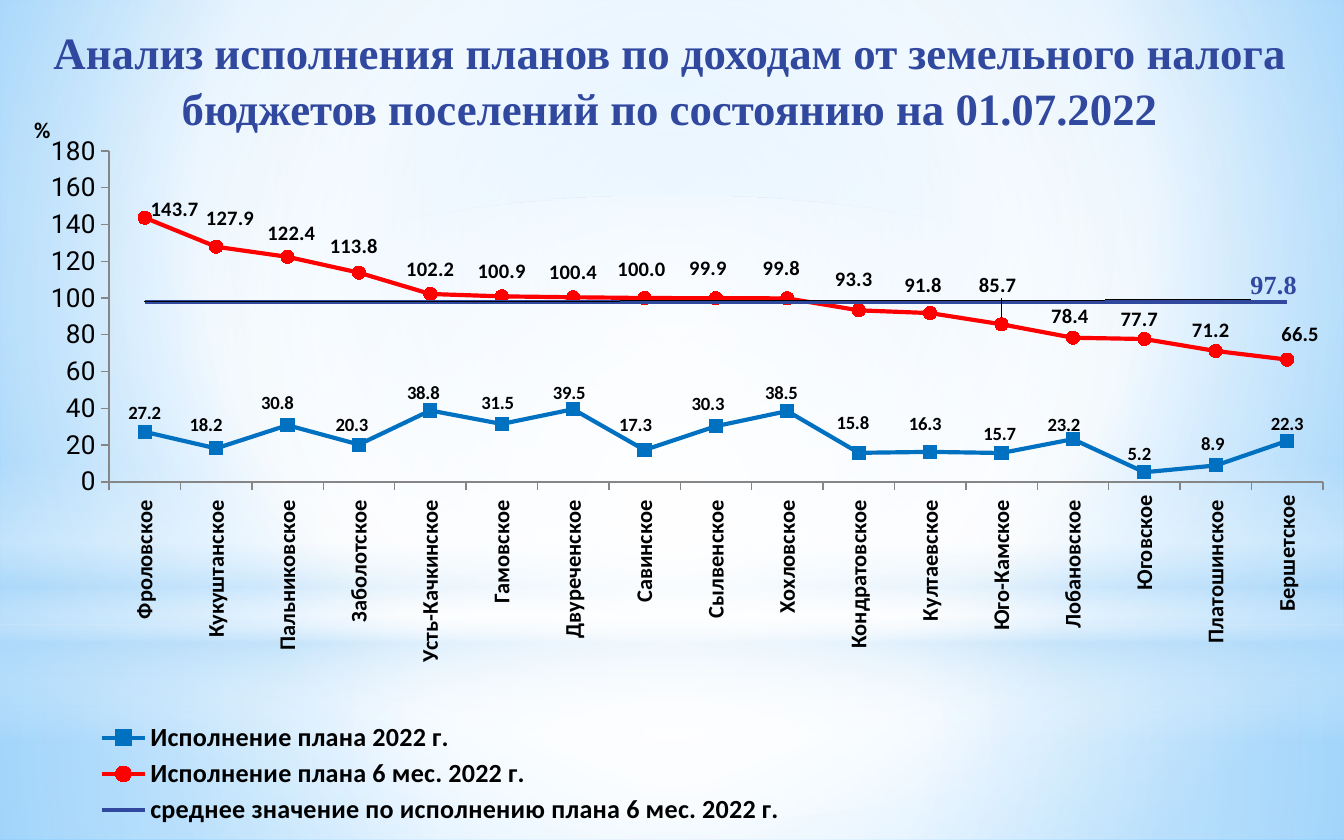
from dataclasses import dataclass
from typing import Any

from pptx import Presentation
from pptx import util as u
from pptx.chart.data import CategoryChartData
from pptx.dml.color import RGBColor
from pptx.enum import chart as ce, shapes, text
from pptx.oxml import parse_xml
from pptx.oxml.ns import nsdecls, qn

SCALE = 914400 / 134.4
CHART_W, CHART_H = 1323, 751

WHITE = RGBColor(0xFF, 0xFF, 0xFF)
BLACK = RGBColor(0x00, 0x00, 0x00)
SKY = RGBColor(0x9E, 0xD5, 0xFF)
AZURE = RGBColor(0x5B, 0xB9, 0xFF)
PALE = RGBColor(0xB4, 0xDC, 0xFA)
INDIGO = RGBColor(0x31, 0x48, 0x9F)
BLUE = RGBColor(0x00, 0x70, 0xC0)
RED = RGBColor(0xFF, 0x00, 0x00)
GRAY = RGBColor(0x86, 0x86, 0x86)

TITLE = ("Анализ исполнения планов по доходам от земельного налога "
         "бюджетов поселений по состоянию на 01.07.2022")
SETTLEMENTS = [
    "Фроловское ", "Кукуштанское ", "Пальниковское ", "Заболотское ",
    "Усть-Качкинское ", "Гамовское ", "Двуреченское ", "Савинское ",
    "Сылвенское ", "Хохловское ", "Кондратовское ", "Култаевское ",
    "Юго-Камское ", "Лобановское ", "Юговское", "Платошинское ", "Бершетское",
]


@dataclass
class Gradient:
    stops: list[tuple[int, RGBColor, int]]
    focus: tuple[int, int, int, int] | None = (50, 50, 50, 50)


@dataclass
class Panel:
    box: tuple[int, int, int, int]
    gradient: Gradient
    kind: Any = shapes.MSO_SHAPE.RECTANGLE


@dataclass
class Line:
    name: str
    values: list[float]
    color: RGBColor
    marker: Any
    font: dict[str, Any]
    offsets: dict[int, tuple[int, int]]
    label_all: bool = True


BACKDROP = Gradient([(0, SKY, 100), (60, WHITE, 100), (100, AZURE, 100)], (20, 10, 20, 60))
PANELS = [
    Panel((0, 625, 1344, 215), Gradient([(0, WHITE, 91), (37, WHITE, 76), (100, PALE, 79)])),
    Panel((0, 0, 1344, 625), Gradient([(0, WHITE, 89), (48, WHITE, 62), (100, PALE, 79)])),
    Panel((0, 461, 1344, 280), Gradient(
        [(0, WHITE, 0), (29, WHITE, 30), (45, PALE, 40), (55, WHITE, 26),
         (65, PALE, 60), (100, WHITE, 0)], None)),
    Panel((0, 196, 1344, 625), Gradient([(0, WHITE, 100), (56, WHITE, 0)]),
          shapes.MSO_SHAPE.OVAL),
]

BOLD = {"name": "Calibri", "bold": True}
LINES = [
    Line("Исполнение плана 2022 г.",
         [27.2, 18.2, 30.8, 20.3, 38.8, 31.5, 39.5, 17.3, 30.3,
          38.5, 15.8, 16.3, 15.7, 23.2, 5.2, 8.9, 22.3],
         BLUE, ce.XL_MARKER_STYLE.SQUARE, BOLD | {"size": u.Pt(10)},
         dict(enumerate([
             (0, 4), (-10, -1), (-10, 0), (-7, 3), (-7, 5), (-4, 2), (-4, 6),
             (-9, -3), (-8, 0), (-6, 4), (-6, -7), (-5, -5), (-2, 4), (-9, 8),
             (-5, 4), (-3, 1), (0, 6)]))),
    Line("Исполнение плана 6 мес. 2022 г.",
         [143.7, 127.9, 122.4, 113.8, 102.2, 100.9, 100.4, 100, 99.9,
          99.8, 93.3, 91.8, 85.7, 78.4, 77.7, 71.2, 66.5],
         RED, ce.XL_MARKER_STYLE.CIRCLE, BOLD | {"size": u.Pt(11)},
         {0: (30, 16), 1: (14, -4), 2: (4, 1), 3: (-5, -2), 7: (-3, -4),
          8: (-8, -5), 9: (-6, -5), 10: (-5, -6), 11: (-7, -3), 12: (-4, -14),
          13: (-3, 3), 14: (-5, 5), 15: (-5, 4), 16: (13, -1)}),
    Line("среднее значение по исполнению плана 6 мес. 2022 г.",
         [97.8] * len(SETTLEMENTS), INDIGO, ce.XL_MARKER_STYLE.NONE,
         {"name": "Times New Roman", "bold": True, "size": u.Pt(14)},
         {0: (1129, 3)}, False),
]


def px(n: int) -> int:
    return round(n * SCALE)


def style(obj: Any, values: dict[str, Any]) -> None:
    for name, value in values.items():
        setattr(obj, name, value)


def set_font(font: Any, values: dict[str, Any], color: RGBColor = BLACK) -> None:
    style(font, values)
    font.color.rgb = color


def paint(root: Any, g: Gradient) -> None:
    stops = "".join(
        f'<a:gs pos="{pos * 1000}"><a:srgbClr val="{color}">'
        f'<a:alpha val="{alpha * 1000}"/></a:srgbClr></a:gs>'
        for pos, color, alpha in g.stops)
    shade = '<a:lin ang="5400000" scaled="0"/>'
    if g.focus:
        sides = " ".join(f'{k}="{v * 1000}"' for k, v in zip("ltrb", g.focus))
        shade = f'<a:path path="circle"><a:fillToRect {sides}/></a:path>'
    solid = root.find(".//" + qn("a:solidFill"))
    solid.getparent().replace(solid, parse_xml(
        f'<a:gradFill {nsdecls("a")} rotWithShape="1"><a:gsLst>{stops}</a:gsLst>{shade}</a:gradFill>'))


def layout_xml(modes: dict[str, str], x: int, y: int, w: int = 0, h: int = 0) -> Any:
    parts = "".join(f'<c:{k} val="{v}"/>' for k, v in modes.items())
    sizes = {"x": x / CHART_W, "y": y / CHART_H}
    if w:
        sizes |= {"w": w / CHART_W, "h": h / CHART_H}
    parts += "".join(f'<c:{k} val="{v:.4f}"/>' for k, v in sizes.items())
    return parse_xml(f'<c:layout {nsdecls("c")}><c:manualLayout>{parts}</c:manualLayout></c:layout>')


def place_after(anchor: Any, layout: Any) -> None:
    old = anchor.getparent().find(qn("c:layout"))
    if old is not None:
        old.getparent().remove(old)
    anchor.addnext(layout)


def add_panel(s: Any, panel: Panel) -> None:
    sp = s.shapes.add_shape(panel.kind, *map(px, panel.box))
    sp.shadow.inherit = False
    sp.line.fill.background()
    sp.fill.solid()
    paint(sp._element, panel.gradient)


def add_title(s: Any) -> None:
    sp = s.shapes.title
    style(sp, {"left": px(0), "top": px(15), "width": px(1339), "height": px(70)})
    s.shapes._spTree.append(sp._element)
    tf = sp.text_frame
    style(tf, {"text": TITLE, "word_wrap": True, "auto_size": text.MSO_AUTO_SIZE.NONE,
               "vertical_anchor": text.MSO_ANCHOR.TOP})
    p = tf.paragraphs[0]
    style(p, {"alignment": text.PP_ALIGN.CENTER, "line_spacing": 1.05})
    set_font(p.runs[0].font, {"name": "Times New Roman", "size": u.Pt(24), "bold": True}, INDIGO)


def format_line(ser: Any, line: Line) -> None:
    ser.smooth = False
    ser.format.line.color.rgb = line.color
    ser.format.line.width = u.Pt(2.25)
    style(ser.marker, {"style": line.marker, "size": 7})
    for part in (ser.marker.format.fill, ser.marker.format.line.fill):
        part.solid()
        part.fore_color.rgb = line.color
    color = BLACK if line.label_all else line.color
    labels = ser.data_labels
    style(labels, {"show_value": line.label_all, "number_format": "#,##0.0",
                   "number_format_is_linked": False, "position": ce.XL_LABEL_POSITION.ABOVE})
    set_font(labels.font, line.font, color)
    for i, (dx, dy) in line.offsets.items():
        label = ser.points[i].data_label
        set_font(label.font, line.font, color)
        label.position = ce.XL_LABEL_POSITION.ABOVE
        idx = ser._element.xpath(f"c:dLbls/c:dLbl/c:idx[@val='{i}']")[0]
        idx.addnext(parse_xml(
            f'<c:numFmt {nsdecls("c")} formatCode="#,##0.0" sourceLinked="0"/>'))
        place_after(idx, layout_xml({}, dx, dy))


def format_axes(chart: Any) -> None:
    cat, val = chart.category_axis, chart.value_axis
    for axis in (cat, val):
        style(axis, {"has_major_gridlines": False,
                     "major_tick_mark": ce.XL_TICK_MARK.OUTSIDE})
        axis.format.line.color.rgb = GRAY
    set_font(cat.tick_labels.font, BOLD | {"size": u.Pt(12)})
    cat._element.find(qn("c:txPr")).find(qn("a:bodyPr")).set("rot", "-5400000")
    style(val, {"minimum_scale": 0, "maximum_scale": 180, "major_unit": 20})
    style(val.tick_labels, {"number_format": "#,##0", "number_format_is_linked": False})
    set_font(val.tick_labels.font, {"name": "Roboto", "size": u.Pt(14)})
    tf = val.axis_title.text_frame
    tf.text = "%"
    set_font(tf.paragraphs[0].runs[0].font, BOLD | {"size": u.Pt(12)})
    tf._txBody.find(qn("a:bodyPr")).set("rot", "0")
    place_after(val._element.xpath("c:title/c:tx")[0],
                layout_xml({"xMode": "edge", "yMode": "edge"}, 14, 20))


def add_line_chart(s: Any) -> None:
    data = CategoryChartData()
    data.categories = SETTLEMENTS
    for line in LINES:
        data.add_series(line.name, line.values)
    chart = s.shapes.add_chart(ce.XL_CHART_TYPE.LINE_MARKERS, px(16), px(91),
                               px(CHART_W), px(CHART_H), data).chart
    style(chart, {"has_title": False, "has_legend": True})
    set_font(chart.font, {"name": "Roboto", "size": u.Pt(18)})
    chart.plots[0].vary_by_categories = False
    for ser, line in zip(chart.plots[0].series, LINES):
        format_line(ser, line)
    format_axes(chart)
    style(chart.legend, {"position": ce.XL_LEGEND_POSITION.BOTTOM, "include_in_layout": False})
    set_font(chart.legend.font, BOLD | {"size": u.Pt(14)})
    edge = {"xMode": "edge", "yMode": "edge"}
    place_after(chart.legend._element.find(qn("c:legendPos")),
                layout_xml(edge, 60, 627, 730, 112))
    area = chart._chartSpace.find(".//" + qn("c:plotArea"))
    old = area.find(qn("c:layout"))
    if old is not None:
        area.remove(old)
    area.insert(0, layout_xml({"layoutTarget": "inner"} | edge, 93, 60, 1214, 331))


def main() -> None:
    prs = Presentation()
    style(prs, {"slide_width": px(1344), "slide_height": px(840)})
    s = prs.slides.add_slide(prs.slide_layouts[5])
    s.background.fill.solid()
    paint(s._element, BACKDROP)
    for panel in PANELS:
        add_panel(s, panel)
    add_title(s)
    add_line_chart(s)
    prs.save("out.pptx")


if __name__ == "__main__":
    main()
